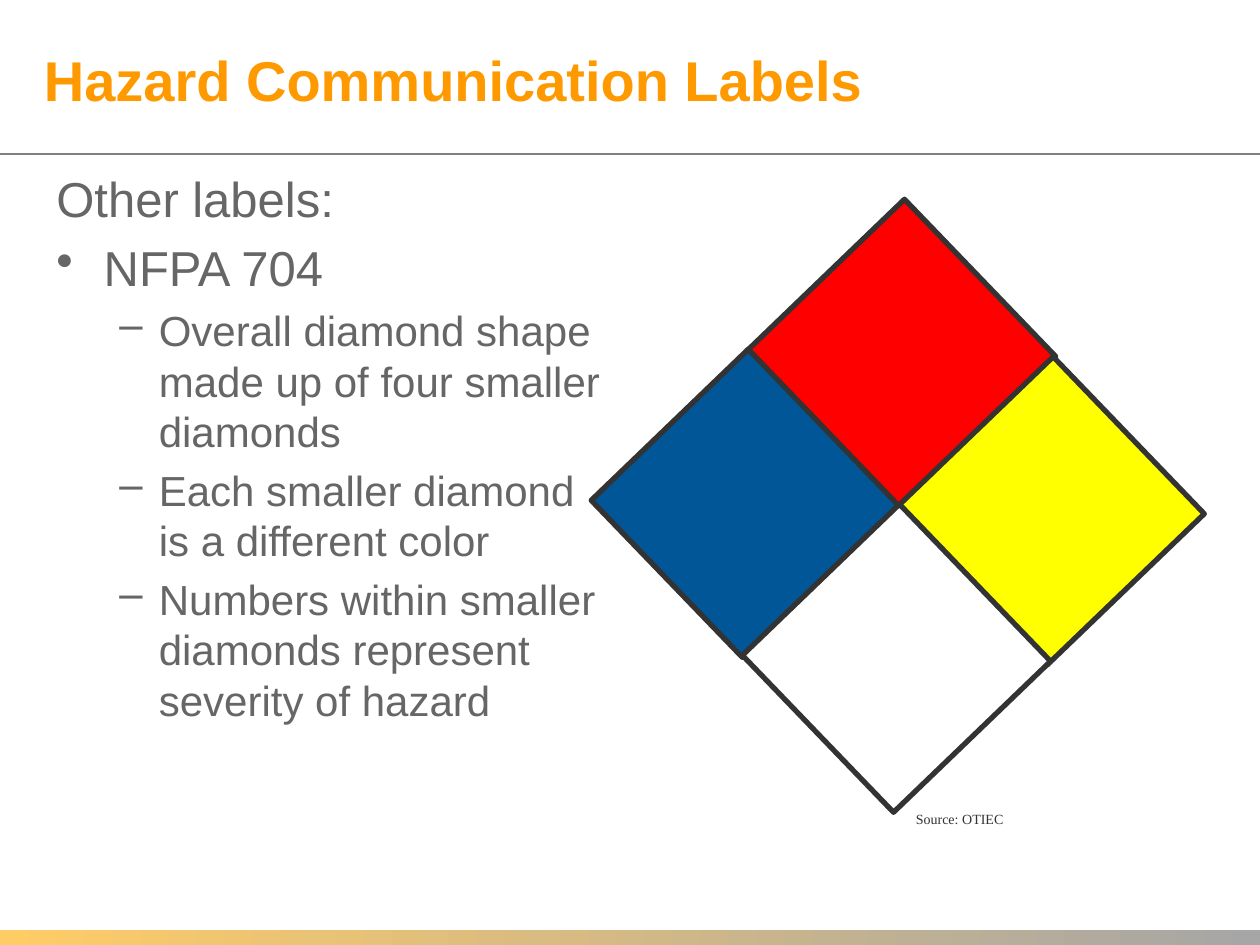
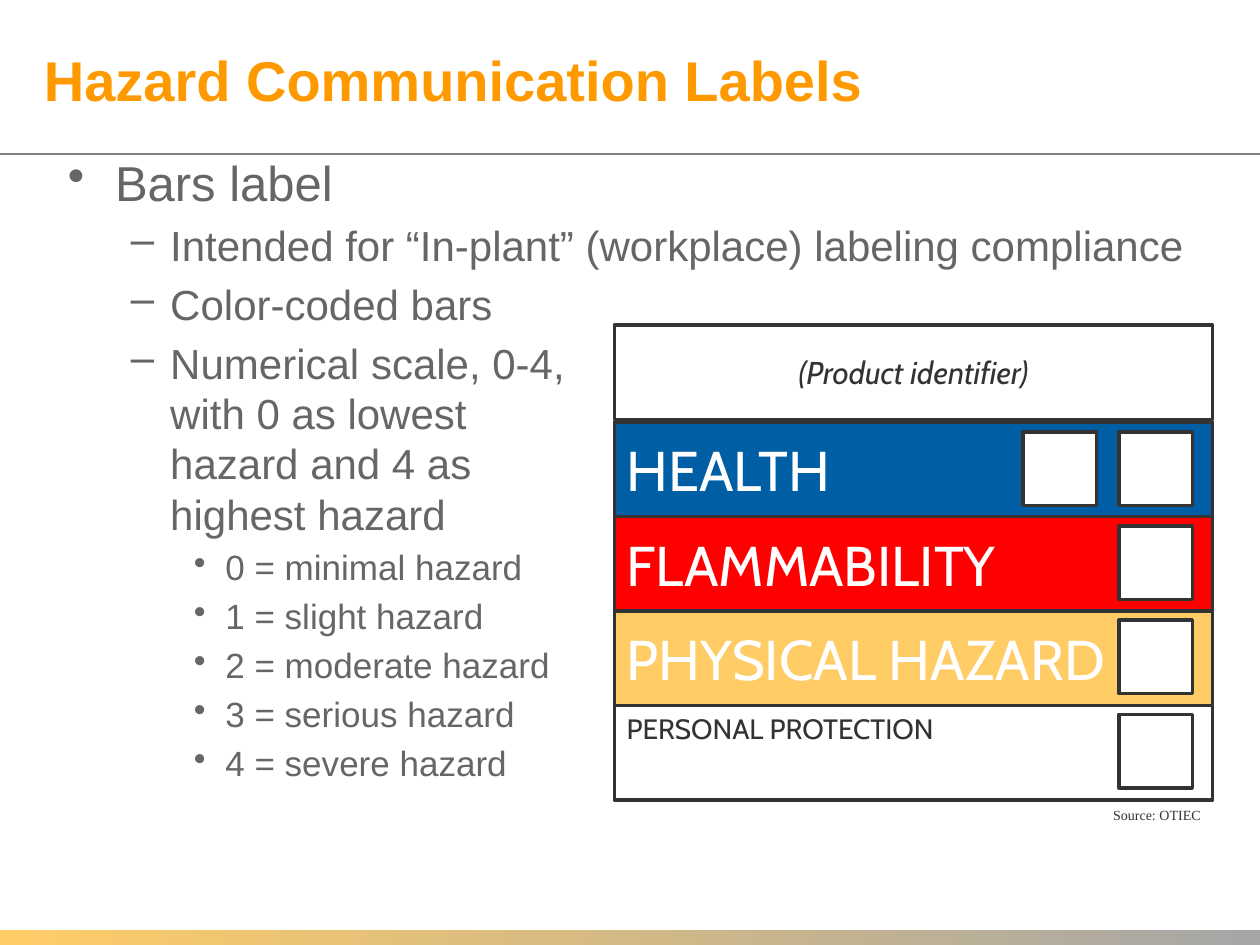
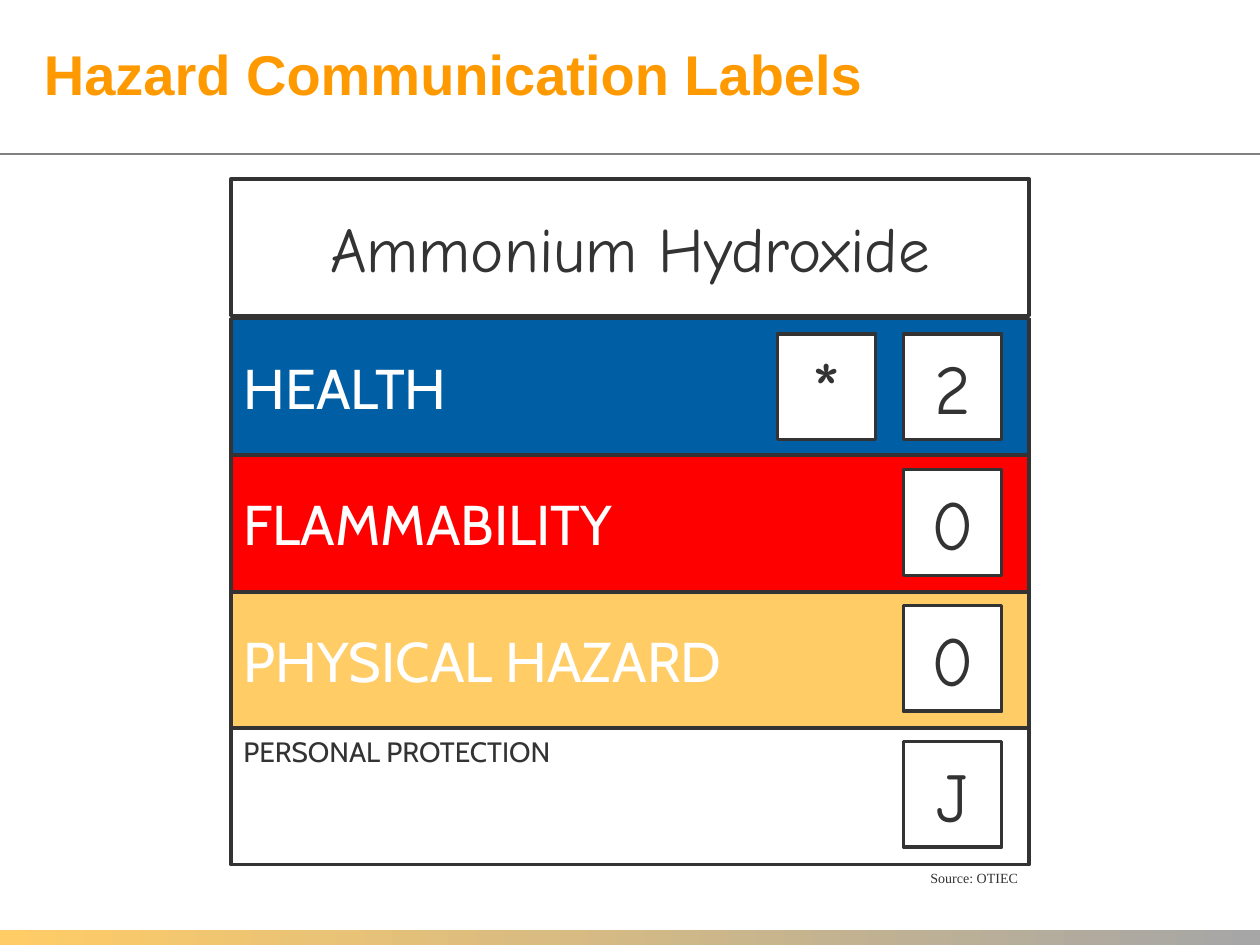
from lxml import etree
from pptx import Presentation
from pptx.dml.color import RGBColor
from pptx.enum.shapes import MSO_CONNECTOR, MSO_SHAPE
from pptx.enum.text import MSO_ANCHOR as Anchor, PP_ALIGN as Align
from pptx.oxml.ns import qn
from pptx.util import Pt

ORANGE = RGBColor(0xFF, 0x99, 0x00)
GOLD = RGBColor(0xFF, 0xCC, 0x66)
SILVER = RGBColor(0xA6, 0xA6, 0xA6)
RULE_GRAY = RGBColor(0x80, 0x80, 0x80)
BODY_GRAY = RGBColor(0x66, 0x66, 0x66)
INK = RGBColor(0x33, 0x33, 0x33)
WHITE = RGBColor(0xFF, 0xFF, 0xFF)
RED = RGBColor(0xFF, 0x00, 0x00)
YELLOW = RGBColor(0xFF, 0xFF, 0x00)
NFPA_BLUE = RGBColor(0x00, 0x56, 0x96)
BAR_BLUE = RGBColor(0x00, 0x5E, 0xA4)


def add_block(page, left, top, width, height, fill, line_width):
    block = page.shapes.add_shape(MSO_SHAPE.RECTANGLE, Pt(left), Pt(top), Pt(width), Pt(height))
    block.shadow.inherit = False
    block.fill.solid()
    block.fill.fore_color.rgb = fill
    block.line.color.rgb = INK
    block.line.width = Pt(line_width)
    return block


def write(shape, text, font, size, color, align=Align.LEFT, anchor=Anchor.MIDDLE):
    """Put one styled paragraph in the shape and return it."""
    shape.text_frame.word_wrap = True
    shape.text_frame.vertical_anchor = anchor
    para = shape.text_frame.paragraphs[0]
    para.text = text
    para.alignment = align
    para.font.name = font
    para.font.size = Pt(size)
    para.font.color.rgb = color
    return para


deck = Presentation()
deck.slide_width, deck.slide_height = Pt(720), Pt(540)

# Shared frame: footer band, rule, title and source line
frames = [
    # title top, source left, source top, source width, source alignment
    (12.24, 516.24, 459.36, 112.32, Align.LEFT),
    (12.24, 609.12, 457.2, 84.24, Align.RIGHT),
    (8.64, 504.72, 493.2, 84.24, Align.RIGHT),
]
for title_top, source_left, source_top, source_width, source_align in frames:
    page = deck.slides.add_slide(deck.slide_layouts[6])

    band = page.shapes.add_shape(MSO_SHAPE.RECTANGLE, 0, Pt(531.36), Pt(720), Pt(8.64))
    band.shadow.inherit = False
    band.line.fill.background()
    band.fill.gradient()
    band.fill.gradient_angle = 0
    for stop, color in zip(band.fill.gradient_stops, (GOLD, SILVER)):
        stop.color.rgb = color

    rule = page.shapes.add_connector(MSO_CONNECTOR.STRAIGHT, 0, Pt(87.84), Pt(720), Pt(87.84))
    rule.line.color.rgb = RULE_GRAY
    rule.line.width = Pt(1)
    etree.SubElement(rule._element.spPr, qn("a:effectLst"))

    title = page.shapes.add_textbox(Pt(18), Pt(title_top), Pt(684), Pt(66.24))
    write(title, "Hazard Communication Labels", "Arial", 32, ORANGE).font.bold = True

    source = page.shapes.add_textbox(Pt(source_left), Pt(source_top), Pt(source_width), Pt(17.28))
    write(source, "Source: OTIEC", "Times New Roman", 8, INK, source_align, Anchor.TOP)

nfpa_page, bars_page, example_page = deck.slides

# Body text: each paragraph has a style that sets level, size, bullet, margin and indent
styles = {
    "lead": (0, 28, None, 0, 0),
    "point": (0, 28, "•", 27, -27),
    "dash": (1, 24, "–", 58.5, -22.5),
    "dot": (2, 20, "•", 90, -18),
}
bodies = [
    (nfpa_page, (25.2, 92.88, 329.04, 354.24), [
        ("lead", "Other labels:"),
        ("point", "NFPA 704"),
        ("dash", "Overall diamond shape made up of four smaller diamonds"),
        ("dash", "Each smaller diamond is a different color"),
        ("dash", "Numbers within smaller diamonds represent severity of hazard"),
    ]),
    (bars_page, (31.68, 83.52, 668.88, 377.28), [
        ("point", "Bars label"),
        ("dash", "Intended for “In-plant” (workplace) labeling compliance"),
        ("dash", "Color-coded bars"),
        ("dash", "Numerical scale, 0-4,\vwith 0 as lowest\vhazard and 4 as\vhighest hazard"),
        ("dot", "0 = minimal hazard"),
        ("dot", "1 = slight hazard"),
        ("dot", "2 = moderate hazard"),
        ("dot", "3 = serious hazard"),
        ("dot", "4 = severe hazard"),
    ]),
]
for page, place, lines in bodies:
    box = page.shapes.add_textbox(*map(Pt, place))
    box.text_frame.word_wrap = True
    for index, (style, text) in enumerate(lines):
        level, size, bullet, margin, indent = styles[style]
        para = box.text_frame.add_paragraph() if index else box.text_frame.paragraphs[0]
        para.text = text
        para.level = level
        if bullet:
            props = para._p.get_or_add_pPr()
            props.set("marL", str(Pt(margin)))
            props.set("indent", str(Pt(indent)))
            etree.SubElement(props, qn("a:buChar"), char=bullet)
        para.space_before = Pt(0.2 * size if index else 0)
        para.font.name = "Arial"
        para.font.size = Pt(size)
        para.font.color.rgb = BODY_GRAY

# NFPA 704 diamond
DIAMOND_SIDE = 124.56
for left, top, color in [
    (452.88, 139.68, RED),
    (537.84, 229.68, YELLOW),
    (363.6, 225.36, NFPA_BLUE),
    (450, 313.92, WHITE),
]:
    diamond = add_block(nfpa_page, left, top, DIAMOND_SIDE, DIAMOND_SIDE, color, 3)
    diamond.rotation = 46.1

# Bar labels: colour bars, rating boxes and the product name
bars = [
    ("HEALTH", BAR_BLUE, 32, WHITE, Anchor.MIDDLE),
    ("FLAMMABILITY", RED, 32, WHITE, Anchor.MIDDLE),
    ("PHYSICAL HAZARD", GOLD, 32, WHITE, Anchor.MIDDLE),
    ("PERSONAL PROTECTION", WHITE, 16, INK, Anchor.TOP),
]
labels = [
    # page, left, width, bar height, name top, bars top,
    # rating columns, ratings top, step, box width, box height, ratings, name, font, size
    (bars_page, 351, 342, 54, 185.76, 241.2,
     (584.64, 639.36), 246.8, 53.8, 42, 42, None, "(Product identifier)", "Cabin", 18),
    (example_page, 132, 456, 78, 102.24, 182.16,
     (444.24, 516.24), 190.8, 77.6, 56.16, 60.48, "*200J", "Ammonium Hydroxide", "Comic Neue", 36),
]
rating_cells = [(0, 0), (0, 1), (1, 1), (2, 1), (3, 1)]  # row, column
for (page, left, width, height, name_top, bars_top, columns, ratings_top, step,
     box_width, box_height, ratings, name, name_font, name_size) in labels:
    for row, (text, fill, size, color, anchor) in enumerate(bars):
        bar = add_block(page, left, bars_top + row * height, width, height, fill, 2)
        write(bar, text, "Cabin", size, color, anchor=anchor)
    for index, (row, column) in enumerate(rating_cells):
        rating_box = add_block(page, columns[column], ratings_top + row * step,
                               box_width, box_height, WHITE, 2)
        if ratings:
            rating = ratings[index]
            write(rating_box, rating, "Comic Neue", 44 if rating == "*" else 40, INK, Align.CENTER)
    name_bar = add_block(page, left, name_top, width, height, WHITE, 2)
    para = write(name_bar, name, name_font, name_size, INK, Align.CENTER)
    para.font.italic = page is bars_page

deck.save("out.pptx")
